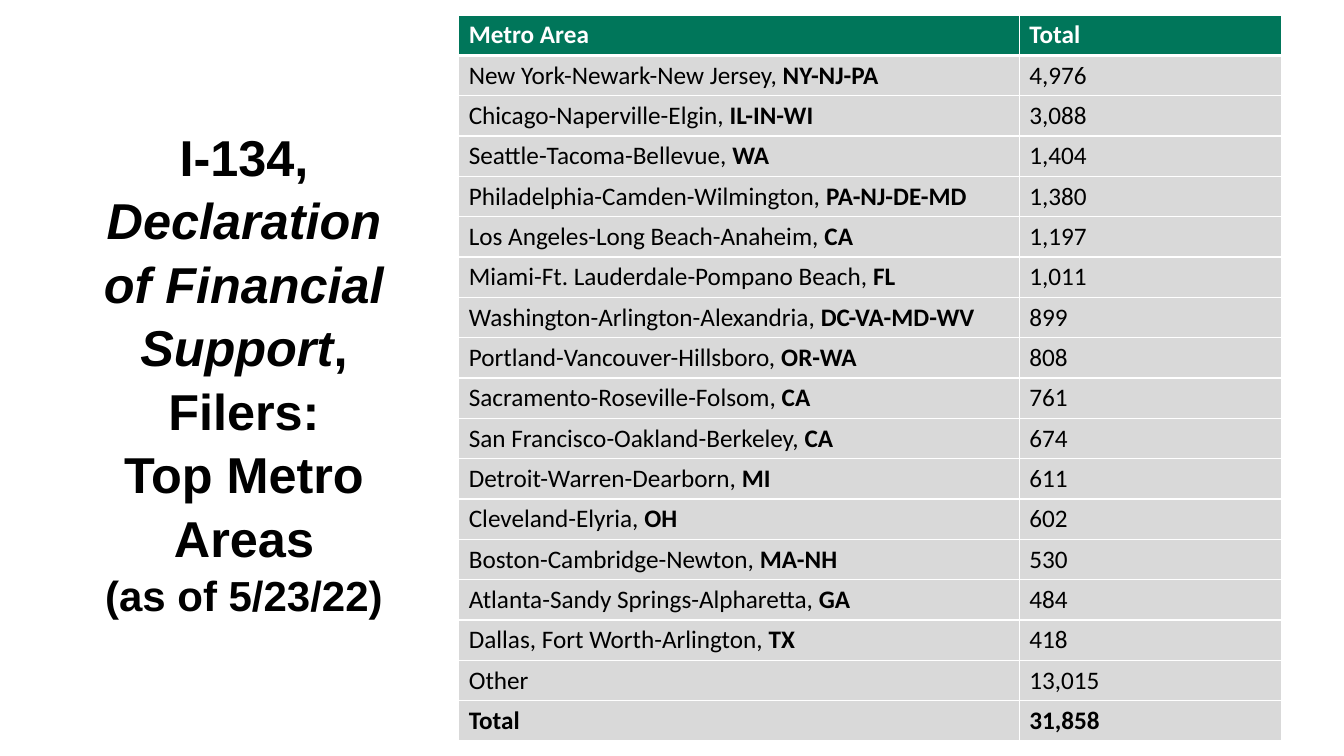
from lxml import etree
from pptx import Presentation
from pptx.dml.color import RGBColor
from pptx.enum import text
from pptx.oxml.ns import qn
from pptx.util import Inches, Pt

BLACK = RGBColor(0x00, 0x00, 0x00)
WHITE = RGBColor(0xFF, 0xFF, 0xFF)
GREEN = RGBColor(0x00, 0x76, 0x5A)
GRAY = RGBColor(0xD9, 0xD9, 0xD9)

# Each title line holds its font size and (text, italic) spans.
TITLE = [
    (36, [("I-134, ", False), ("Declaration of Financial Support", True),
          (", Filers:", False)]),
    (36, [("Top Metro Areas", False)]),
    (30, [("(as of 5/23/22)", False)]),
]

METRO_AREAS = [
    ("New York-Newark-New Jersey", "NY-NJ-PA", "4,976"),
    ("Chicago-Naperville-Elgin", "IL-IN-WI", "3,088"),
    ("Seattle-Tacoma-Bellevue", "WA", "1,404"),
    ("Philadelphia-Camden-Wilmington", "PA-NJ-DE-MD", "1,380"),
    ("Los Angeles-Long Beach-Anaheim", "CA", "1,197"),
    ("Miami-Ft. Lauderdale-Pompano Beach", "FL", "1,011"),
    ("Washington-Arlington-Alexandria", "DC-VA-MD-WV", "899"),
    ("Portland-Vancouver-Hillsboro", "OR-WA", "808"),
    ("Sacramento-Roseville-Folsom", "CA", "761"),
    ("San Francisco-Oakland-Berkeley", "CA", "674"),
    ("Detroit-Warren-Dearborn", "MI", "611"),
    ("Cleveland-Elyria", "OH", "602"),
    ("Boston-Cambridge-Newton", "MA-NH", "530"),
    ("Atlanta-Sandy Springs-Alpharetta", "GA", "484"),
    ("Dallas, Fort Worth-Arlington", "TX", "418"),
]
COLUMN_WIDTHS = (5.56, 2.6)
ROW_HEIGHT = 0.4


def add_span(para, words, font, size, color, bold=False, italic=False):
    span = para.add_run()
    span.text = words
    span.font.name = font
    span.font.size = Pt(size)
    span.font.color.rgb = color
    span.font.bold = bold
    span.font.italic = italic


def add_title(page):
    box = page.shapes.add_textbox(Inches(0.83), Inches(1.26), Inches(3.18), Inches(4.85))
    frame = box.text_frame
    frame.word_wrap = True
    frame.auto_size = text.MSO_AUTO_SIZE.SHAPE_TO_FIT_TEXT
    frame.vertical_anchor = text.MSO_ANCHOR.MIDDLE
    for index, (size, spans) in enumerate(TITLE):
        para = frame.add_paragraph() if index else frame.paragraphs[0]
        para.alignment = text.PP_ALIGN.CENTER
        para.line_spacing = 1.05
        for words, italic in spans:
            add_span(para, words, "Arial", size, BLACK, bold=True, italic=italic)


def add_borders(cell, bottom_width):
    """Draw white lines of 1 pt round the cell, with its own bottom width."""
    properties = cell._tc.get_or_add_tcPr()
    for side, width in (("L", 1), ("R", 1), ("T", 1), ("B", bottom_width)):
        line = etree.SubElement(properties, qn(f"a:ln{side}"), w=str(Pt(width)))
        fill = etree.SubElement(line, qn("a:solidFill"))
        etree.SubElement(fill, qn("a:srgbClr"), val=str(WHITE))


def fill_cell(cell, spans, is_header):
    """Write (text, bold) spans into a styled cell."""
    add_borders(cell, 3 if is_header else 1)
    cell.fill.solid()
    cell.fill.fore_color.rgb = GREEN if is_header else GRAY
    cell.margin_top = cell.margin_bottom = Inches(0.04)
    cell.vertical_anchor = text.MSO_ANCHOR.MIDDLE
    para = cell.text_frame.paragraphs[0]
    for words, bold in spans:
        add_span(para, words, "Calibri", 18, WHITE if is_header else BLACK, bold)


def add_metro_table(page):
    rows = [([("Metro Area", True)], [("Total", True)])]
    rows += [([(f"{area}, ", False), (states, True)], [(total, False)])
             for area, states, total in METRO_AREAS]
    rows += [([("Other", False)], [("13,015", False)]),
             ([("Total", True)], [("31,858", True)])]
    table = page.shapes.add_table(
        len(rows), len(COLUMN_WIDTHS), Inches(4.55), Inches(0.15),
        Inches(sum(COLUMN_WIDTHS)), Inches(ROW_HEIGHT * len(rows))).table
    for column, width in zip(table.columns, COLUMN_WIDTHS):
        column.width = Inches(width)
    for index, (row, contents) in enumerate(zip(table.rows, rows)):
        row.height = Inches(ROW_HEIGHT)
        for cell, spans in zip(row.cells, contents):
            fill_cell(cell, spans, is_header=index == 0)


def main():
    deck = Presentation()
    deck.slide_width = Inches(13.33)
    deck.slide_height = Inches(7.5)
    page = deck.slides.add_slide(deck.slide_layouts[6])
    add_title(page)
    add_metro_table(page)
    deck.save("out.pptx")


if __name__ == "__main__":
    main()
